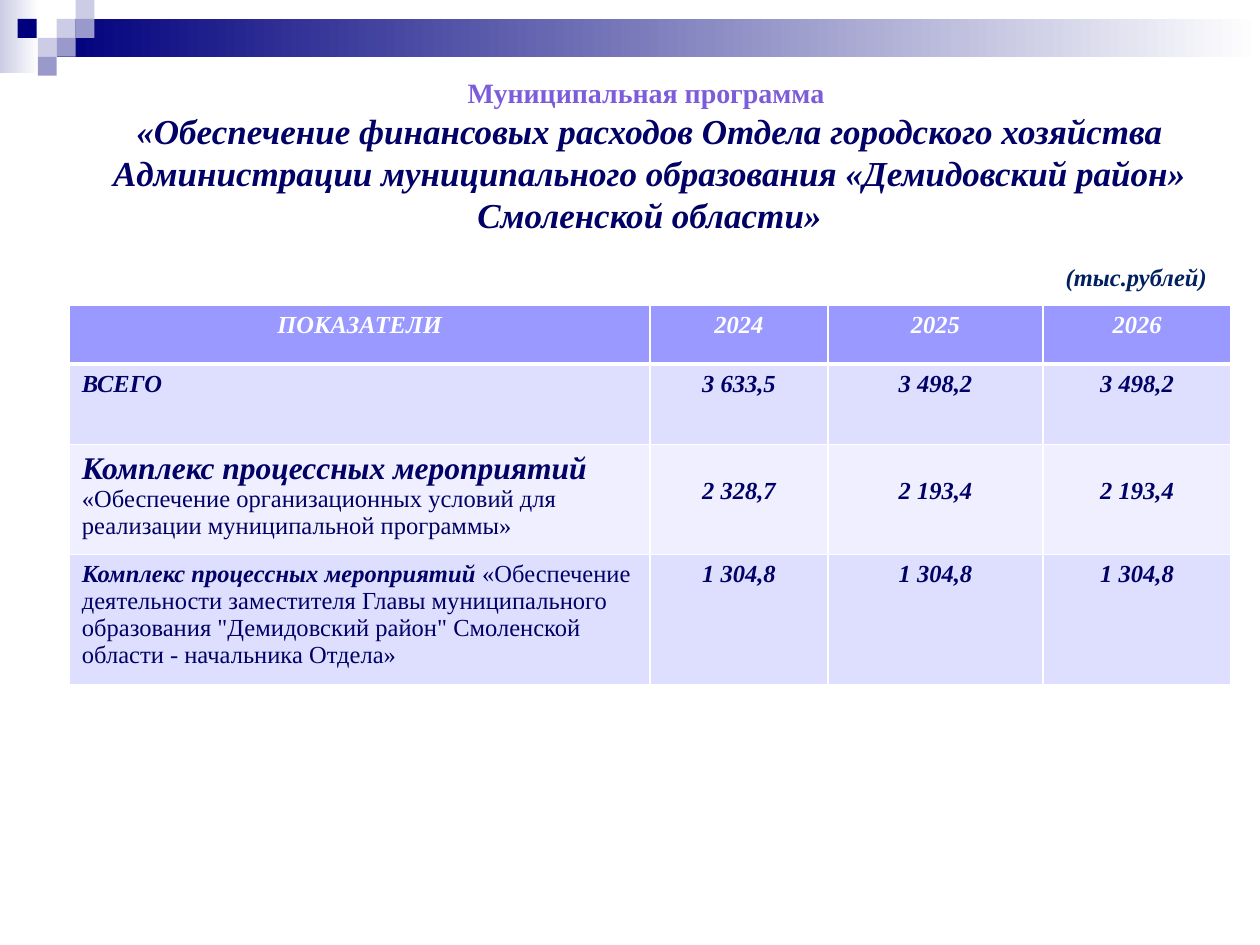
from lxml import etree
from pptx import Presentation
from pptx.dml.color import RGBColor
from pptx.enum.shapes import MSO_SHAPE
from pptx.enum.text import PP_ALIGN
from pptx.oxml.ns import qn
from pptx.util import Inches, Pt

RECTANGLE = MSO_SHAPE.RECTANGLE
LEFT, CENTER = PP_ALIGN.LEFT, PP_ALIGN.CENTER
FONT = "Times New Roman"
WHITE, NAVY, PALE, MIDTONE = "FFFFFF", "00007D", "CCCCE6", "9999CC"
INK = "000066"
TILE = 0.15
TILES = [(0.45, 0.15, PALE), (0.6, 0, PALE), (0.6, 0.15, MIDTONE),
         (0.3, 0.3, PALE), (0.14, 0.15, NAVY), (0.45, 0.3, MIDTONE),
         (0.3, 0.45, MIDTONE)]
COLUMN_WIDTHS = [4.61, 1.41, 1.71, 1.49]
ROW_HEIGHTS = [0.47, 0.64, 0.87, 1.03]
ROW_FILLS = ["9999FF", "DEDEFF", "EFEFFF", "DEDEFF"]
COMPLEX = "Комплекс процессных мероприятий "
INDICATORS = [
    ("ПОКАЗАТЕЛИ", 14, ""),
    ("ВСЕГО", 14, ""),
    (COMPLEX, 18, "«Обеспечение организационных условий для реализации "
                  "муниципальной программы»"),
    (COMPLEX, 14, "«Обеспечение деятельности заместителя Главы муниципального "
                  "образования \"Демидовский район\" Смоленской области - "
                  "начальника Отдела»"),
]
VALUES = [["2024", "2025", "2026"],
          ["3 633,5", "3 498,2", "3 498,2"],
          ["2 328,7", "2 193,4", "2 193,4"],
          ["1 304,8", "1 304,8", "1 304,8"]]


def rgb(color):
    """Turn a hex string into a colour."""
    return RGBColor.from_string(color)


def style(font, size, color, bold=True, italic=True):
    """Set the face, size, colour and emphasis of a font."""
    font.name, font.size = FONT, Pt(size)
    font.bold, font.italic = bold, italic
    font.color.rgb = rgb(color)


def add_block(slide, left, top, width, height, color, fade=False):
    """Add a plain rectangle, optionally fading to white rightwards."""
    block = slide.shapes.add_shape(RECTANGLE, Inches(left), Inches(top),
                                   Inches(width), Inches(height))
    block.shadow.inherit = False
    block.line.fill.background()
    if fade:
        block.fill.gradient()
        block.fill.gradient_angle = 0
        for stop, shade in zip(block.fill.gradient_stops, (color, WHITE)):
            stop.color.rgb = rgb(shade)
    else:
        block.fill.solid()
        block.fill.fore_color.rgb = rgb(color)


def add_text(slide, left, top, width, height, lines, align, wrap=True):
    """Add a text box with one styled paragraph per line."""
    frame = slide.shapes.add_textbox(Inches(left), Inches(top), Inches(width),
                                     Inches(height)).text_frame
    frame.word_wrap = wrap
    for index, (text, size, color, italic) in enumerate(lines):
        paragraph = frame.add_paragraph() if index else frame.paragraphs[0]
        paragraph.text, paragraph.alignment = text, align
        style(paragraph.font, size, color, italic=italic)


def add_borders(cell, bottom):
    """Draw white cell borders with the given bottom width in points."""
    properties = cell._tc.get_or_add_tcPr()
    widths = {"a:lnL": 1, "a:lnR": 1, "a:lnT": 1, "a:lnB": bottom}
    for index, (side, width) in enumerate(widths.items()):
        line = etree.Element(qn(side), w=str(Pt(width)))
        fill = etree.SubElement(line, qn("a:solidFill"))
        etree.SubElement(fill, qn("a:srgbClr"), val=WHITE)
        properties.insert(index, line)


def fill_cell(cell, text, size, color, align, detail=""):
    """Write an emphasised text and an optional plain continuation."""
    paragraph = cell.text_frame.paragraphs[0]
    paragraph.alignment = align
    if not detail:
        paragraph.text = text
        style(paragraph.font, size, color)
        return
    for part, part_size, strong in ((text, size, True), (detail, 14, False)):
        run = paragraph.add_run()
        run.text = part
        style(run.font, part_size, color, strong, strong)


def add_indicator_table(slide):
    """Add the table of programme spending by year."""
    table = slide.shapes.add_table(
        len(ROW_HEIGHTS), len(COLUMN_WIDTHS), Inches(0.55), Inches(2.42),
        Inches(sum(COLUMN_WIDTHS)), Inches(sum(ROW_HEIGHTS))).table
    for column, width in zip(table.columns, COLUMN_WIDTHS):
        column.width = Inches(width)
    for row_index, (name, size, detail) in enumerate(INDICATORS):
        row = table.rows[row_index]
        row.height = Inches(ROW_HEIGHTS[row_index])
        header = row_index == 0
        color = WHITE if header else INK
        cells = list(row.cells)
        fill_cell(cells[0], name, size, color, CENTER if header else LEFT,
                  detail)
        for cell, value in zip(cells[1:], VALUES[row_index]):
            fill_cell(cell, value, 14, color, CENTER)
            if size == 18:
                cell.margin_top = Inches(0.26)
        for cell in cells:
            cell.fill.solid()
            cell.fill.fore_color.rgb = rgb(ROW_FILLS[row_index])
            add_borders(cell, 3 if header else 1)


def main():
    """Build the slide and save it."""
    presentation = Presentation()
    presentation.slide_width = Inches(10)
    presentation.slide_height = Inches(7.5)
    slide = presentation.slides.add_slide(presentation.slide_layouts[6])
    add_block(slide, 0, 0, 0.31, 0.58, PALE, fade=True)
    add_block(slide, 0.45, 0.15, 9.55, 0.3, NAVY, fade=True)
    for left, top, color in TILES:
        add_block(slide, left, top, TILE, TILE, color)
    add_text(slide, 0.31, 0.55, 9.69, 1.38, [
        ("Муниципальная программа ", 16, "7D5CDA", False),
        ("«Обеспечение финансовых расходов Отдела городского хозяйства "
         "Администрации муниципального образования «Демидовский район» "
         "Смоленской области»", 20, INK, True)], CENTER)
    add_indicator_table(slide)
    add_text(slide, 8.36, 2.03, 1.33, 0.34,
             [("(тыс.рублей)", 14, "002060", True)], LEFT, wrap=False)
    presentation.save("out.pptx")


if __name__ == "__main__":
    main()
